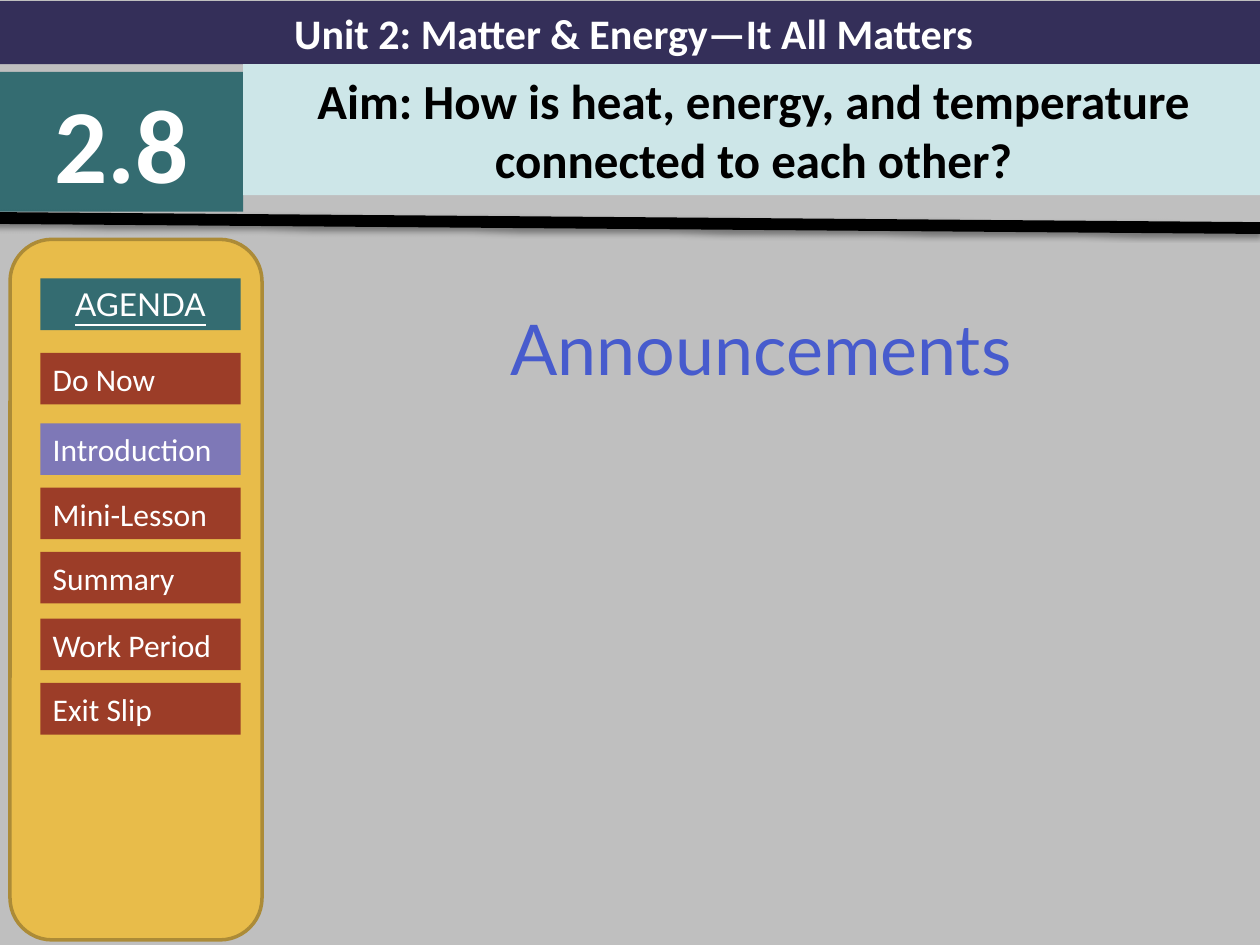
import pptx
import pptx.util
import pptx.dml.color
import pptx.enum.shapes
import pptx.enum.text
import pptx.oxml
from pptx.util import Inches

SHAPES = pptx.enum.shapes.MSO_SHAPE
ALIGN = pptx.enum.text.PP_ALIGN
ANCHOR = pptx.enum.text.MSO_ANCHOR

HEADING = "Announcements"
BANNERS = [
    ("Unit 2: Matter & Energy—It All Matters", (0, 0.01, 10.06, 0.5), "342F59", 24, "FFFFFF"),
    ("2.8", (0, 0.57, 1.93, 1.11), "346C71", 60, "FFFFFF"),
    ("Aim: How is heat, energy, and temperature connected to each other?",
     (1.93, 0.51, 8.1, 1.04), "CDE6E8", 28, "000000"),
]
AGENDA_TITLE = "AGENDA"
AGENDA = [
    ("Do Now", 2.8),
    ("Introduction", 3.36),
    ("Mini-Lesson", 3.87),
    ("Summary", 4.38),
    ("Work Period", 4.91),
    ("Exit Slip", 5.42),
]
CURRENT = "Introduction"
ITEM_LEFT, ITEM_WIDTH, ITEM_HEIGHT = 0.32, 1.59, 0.41

SHADOW = (
    '<a:effectLst xmlns:a="http://schemas.openxmlformats.org/drawingml/2006/main">'
    '<a:outerShdw blurRad="39370" dist="20320" dir="5400000" rotWithShape="0">'
    '<a:srgbClr val="000000"><a:alpha val="38000"/></a:srgbClr>'
    '</a:outerShdw></a:effectLst>'
)


def color(value):
    return pptx.dml.color.RGBColor.from_string(value)


def write(box, text, size, font, ink, align, bold=False, underline=False):
    frame = box.text_frame
    frame.word_wrap = True
    frame.auto_size = pptx.enum.text.MSO_AUTO_SIZE.NONE
    para = frame.paragraphs[0]
    para.alignment = align
    span = para.add_run()
    span.text = text
    span.font.size = pptx.util.Pt(size)
    span.font.name = font
    span.font.bold = bold
    span.font.underline = underline
    span.font.color.rgb = color(ink)
    return para


def add_block(shapes, area, fill, kind=SHAPES.RECTANGLE):
    block = shapes.add_shape(kind, *map(Inches, area))
    block.shadow.inherit = False
    block.fill.solid()
    block.fill.fore_color.rgb = color(fill)
    block.line.fill.background()
    block.text_frame.vertical_anchor = ANCHOR.MIDDLE
    return block


def add_heading(page):
    box = page.shapes.title
    box.left, box.top, box.width, box.height = map(Inches, (2.08, 2.04, 7.92, 5.46))
    box.text_frame.vertical_anchor = ANCHOR.TOP
    para = write(box, HEADING, 40, "Lato", "475BCD", ALIGN.CENTER)
    para.line_spacing = 1.5
    para.space_before = pptx.util.Pt(8)


def add_divider(page):
    line = page.shapes.add_connector(
        pptx.enum.shapes.MSO_CONNECTOR.STRAIGHT,
        Inches(-0.05), Inches(1.73), Inches(10), Inches(1.81))
    line.line.color.rgb = color("000000")
    line.line.width = pptx.util.Pt(6.75)
    line._element.spPr.append(pptx.oxml.parse_xml(SHADOW))


def add_agenda(page):
    shapes = page.shapes.add_group_shape().shapes
    panel = add_block(shapes, (0.08, 1.9, 2, 5.56), "E8BC4A", SHAPES.ROUNDED_RECTANGLE)
    panel.line.color.rgb = color("AC8B37")
    panel.line.width = pptx.util.Pt(2)
    title = add_block(shapes, (ITEM_LEFT, 2.21, ITEM_WIDTH, ITEM_HEIGHT), "346C71")
    write(title, AGENDA_TITLE, 18, "Lato", "FFFFFF", ALIGN.CENTER, underline=True)
    for label, top in AGENDA:
        fill = "7E78B7" if label == CURRENT else "9C3D28"
        item = add_block(shapes, (ITEM_LEFT, top, ITEM_WIDTH, ITEM_HEIGHT), fill)
        write(item, label, 18, "Calibri", "FFFFFF", ALIGN.LEFT)


def main():
    deck = pptx.Presentation()
    deck.slide_width, deck.slide_height = Inches(10), Inches(7.5)
    page = deck.slides.add_slide(deck.slide_layouts[5])
    page.background.fill.solid()
    page.background.fill.fore_color.rgb = color("BFBFBF")
    add_heading(page)
    for text, area, fill, size, ink in BANNERS:
        banner = add_block(page.shapes, area, fill)
        write(banner, text, size, "Calibri", ink, ALIGN.CENTER, bold=True)
    add_divider(page)
    add_agenda(page)
    deck.save("out.pptx")


if __name__ == "__main__":
    main()
